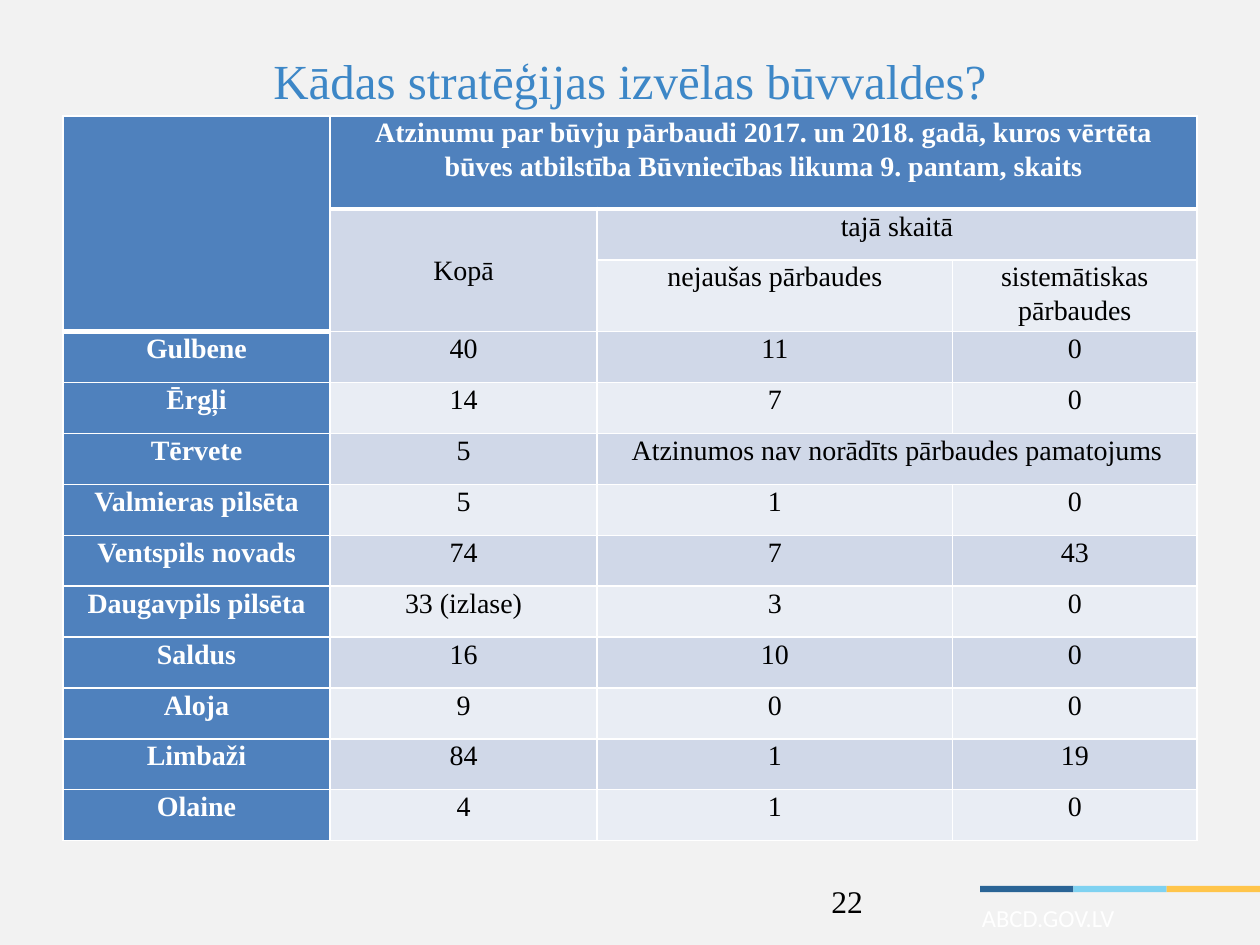
from dataclasses import dataclass

import lxml.etree
import pptx
import pptx.dml.color
import pptx.enum.shapes
import pptx.enum.text
import pptx.oxml.ns
import pptx.util

Pt = pptx.util.Pt
ALIGN = pptx.enum.text.PP_ALIGN
ANCHOR = pptx.enum.text.MSO_ANCHOR

SERIF = "Times New Roman"
BLUE, DARK_BAND, LIGHT_BAND = "4F81BD", "D0D8E8", "E9EDF4"
WHITE, BLACK = "FFFFFF", "000000"

COLUMN_WIDTHS = (152.6, 152.6, 203.2, 139.6)
HEADER_HEIGHT, ROW_HEIGHT = 53.2, 29.1
HEADER_ROWS = 3

# An empty string marks a cell that is empty or covered by a merged one
TABLE_ROWS = (
    ("", "Atzinumu par būvju pārbaudi 2017. un 2018. gadā, kuros vērtēta būves "
         "atbilstība Būvniecības likuma 9. pantam, skaits", "", ""),
    ("", "Kopā", "tajā skaitā", ""),
    ("", "", "nejaušas pārbaudes", "sistemātiskas pārbaudes"),
    ("Gulbene", "40", "11", "0"),
    ("Ērgļi", "14", "7", "0"),
    ("Tērvete", "5", "Atzinumos nav norādīts pārbaudes pamatojums", ""),
    ("Valmieras pilsēta", "5", "1", "0"),
    ("Ventspils novads", "74", "7", "43"),
    ("Daugavpils pilsēta", "33 (izlase)", "3", "0"),
    ("Saldus", "16", "10", "0"),
    ("Aloja", "9", "0", "0"),
    ("Limbaži", "84", "1", "19"),
    ("Olaine", "4", "1", "0"),
)


@dataclass(frozen=True)
class Merge:
    top: int
    left: int
    bottom: int
    right: int


MERGES = (
    Merge(0, 0, 2, 0),
    Merge(0, 1, 0, 3),
    Merge(1, 1, 2, 1),
    Merge(1, 2, 1, 3),
    Merge(5, 2, 5, 3),
)


@dataclass(frozen=True)
class Label:
    text: str
    left: float
    top: float
    width: float
    height: float
    size: float
    color: str
    font: str = SERIF
    align: ALIGN = ALIGN.LEFT
    anchor: ANCHOR = ANCHOR.MIDDLE
    top_inset: float = 3.6


LABELS = (
    Label("Kādas stratēģijas izvēlas būvvaldes?", 36, 21.6, 648, 61.2, 28, "3D87C7",
          align=ALIGN.CENTER, anchor=ANCHOR.TOP, top_inset=7.2),
    Label("22", 468, 500.4, 51.2, 28.8, 18, BLACK),
    Label("ABCD.GOV.LV", 554, 510, 120, 28.8, 14, WHITE, font="Calibri"),
)

STRIPE_COLORS = ("2A6496", "7FD2F1", "FFC54B")
STRIPE_LEFT, STRIPE_TOP, STRIPE_WIDTH, STRIPE_HEIGHT = 560, 506.2, 53.33, 3.6


def rgb(color: str) -> pptx.dml.color.RGBColor:
    return pptx.dml.color.RGBColor.from_string(color)


def paint(fill, color: str) -> None:
    fill.solid()
    fill.fore_color.rgb = rgb(color)


def style_font(font, name: str, size: float, color: str, bold: bool = False) -> None:
    font.name = name
    font.size = Pt(size)
    font.bold = bold
    font.color.rgb = rgb(color)


def add_label(slide, label: Label) -> None:
    shape = slide.shapes.add_textbox(
        Pt(label.left), Pt(label.top), Pt(label.width), Pt(label.height))
    frame = shape.text_frame
    frame.word_wrap = True
    frame.vertical_anchor = label.anchor
    frame.margin_top = Pt(label.top_inset)
    paragraph = frame.paragraphs[0]
    paragraph.text = label.text
    paragraph.alignment = label.align
    style_font(paragraph.font, label.font, label.size, label.color)


def add_stripe(slide, index: int, color: str) -> None:
    shape = slide.shapes.add_shape(
        pptx.enum.shapes.MSO_SHAPE.RECTANGLE,
        Pt(STRIPE_LEFT + index * STRIPE_WIDTH), Pt(STRIPE_TOP),
        Pt(STRIPE_WIDTH), Pt(STRIPE_HEIGHT))
    shape.shadow.inherit = False
    paint(shape.fill, color)
    shape.line.fill.background()


def set_borders(cell, top: float, bottom: float) -> None:
    qn = pptx.oxml.ns.qn
    properties = cell._tc.get_or_add_tcPr()
    widths = {"a:lnL": 1, "a:lnR": 1, "a:lnT": top, "a:lnB": bottom}
    for index, (tag, width) in enumerate(widths.items()):
        line = lxml.etree.Element(qn(tag), w=str(Pt(width)))
        fill = lxml.etree.SubElement(line, qn("a:solidFill"))
        lxml.etree.SubElement(fill, qn("a:srgbClr"), val=WHITE)
        properties.insert(index, line)


def style_cell(cell, row: int, column: int, text: str) -> None:
    heading = row == 0 or column == 0
    band = DARK_BAND if row % 2 else LIGHT_BAND
    paint(cell.fill, BLUE if heading else band)

    # A thick rule closes the heading of each column
    last_heading_row = HEADER_ROWS - 1 if column == 0 else 0
    set_borders(cell, top=3 if row == last_heading_row + 1 else 1,
                bottom=3 if row == last_heading_row else 1)

    cell.margin_left = cell.margin_right = Pt(5)
    cell.margin_top = cell.margin_bottom = Pt(0)
    if text:
        cell.vertical_anchor = ANCHOR.MIDDLE if text == "Kopā" else ANCHOR.TOP
        paragraph = cell.text_frame.paragraphs[0]
        paragraph.text = text
        paragraph.alignment = ALIGN.CENTER
        paragraph.line_spacing = 1.07
        paragraph.space_after = Pt(8)
        style_font(paragraph.font, SERIF, 16, WHITE if heading else BLACK, heading)


def add_inspection_table(slide) -> None:
    heights = [HEADER_HEIGHT] + [ROW_HEIGHT] * (len(TABLE_ROWS) - 1)
    table = slide.shapes.add_table(
        len(heights), len(COLUMN_WIDTHS), Pt(36), Pt(66.2),
        Pt(sum(COLUMN_WIDTHS)), Pt(sum(heights))).table
    for column, width in zip(table.columns, COLUMN_WIDTHS):
        column.width = Pt(width)
    for row, height in zip(table.rows, heights):
        row.height = Pt(height)
    for row_index, texts in enumerate(TABLE_ROWS):
        for column_index, text in enumerate(texts):
            style_cell(table.cell(row_index, column_index), row_index, column_index, text)
    for merge in MERGES:
        table.cell(merge.top, merge.left).merge(table.cell(merge.bottom, merge.right))


def main() -> None:
    presentation = pptx.Presentation()
    presentation.slide_width, presentation.slide_height = Pt(720), Pt(540)
    slide = presentation.slides.add_slide(presentation.slide_layouts[6])
    paint(slide.background.fill, "F2F2F2")

    # Footer stripes
    for index, color in enumerate(STRIPE_COLORS):
        add_stripe(slide, index, color)

    # Title, page number and web address
    for label in LABELS:
        add_label(slide, label)

    # Inspections by municipality
    add_inspection_table(slide)
    presentation.save("out.pptx")


if __name__ == "__main__":
    main()
